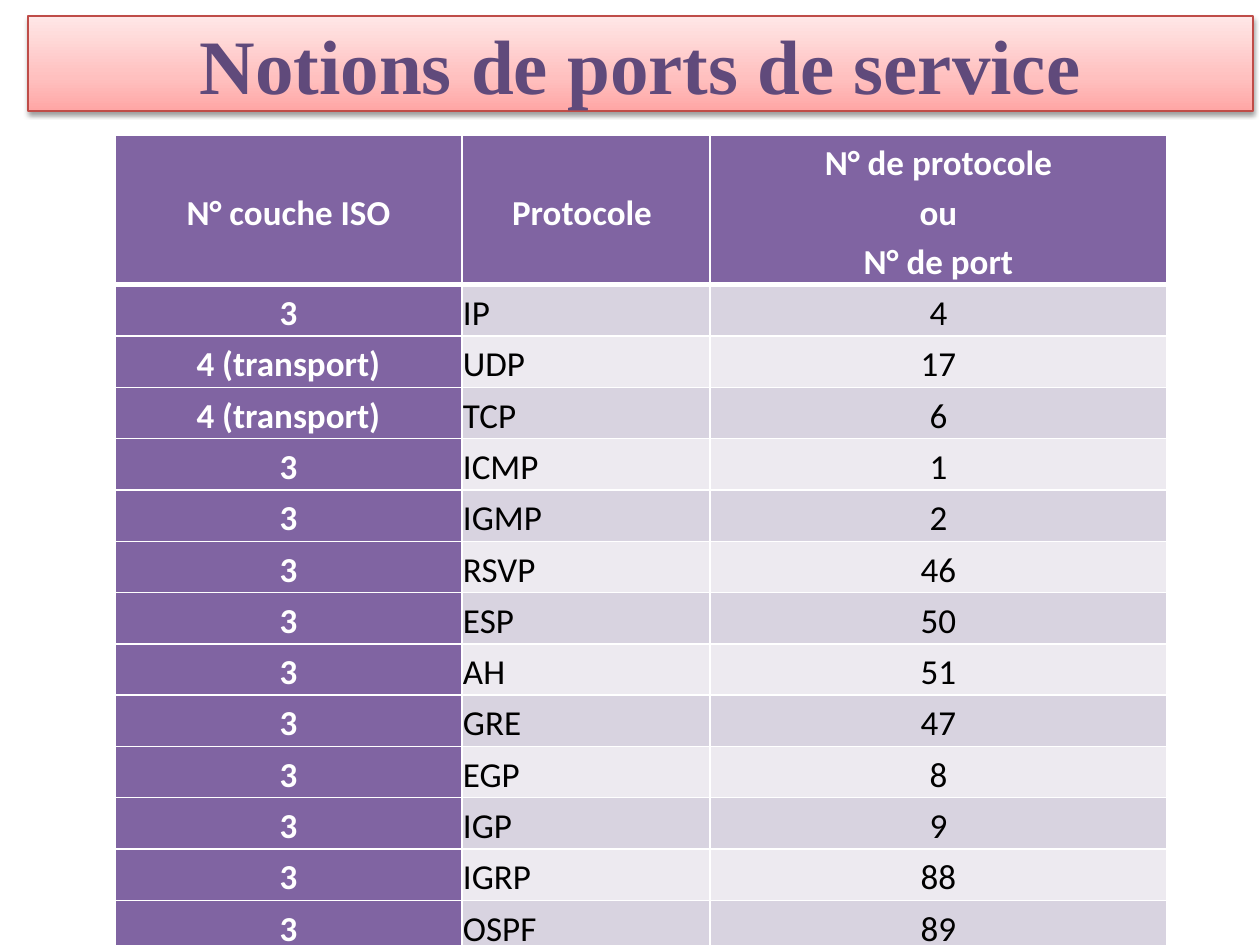
"""Build the slide that lists protocol and port numbers."""
from dataclasses import dataclass

from lxml.etree import SubElement
from pptx import Presentation
from pptx.dml.color import RGBColor
from pptx.enum.text import MSO_ANCHOR as Anchor, PP_ALIGN as Align
from pptx.oxml import parse_xml
from pptx.oxml.ns import nsdecls, qn
from pptx.util import Emu, Pt


@dataclass(frozen=True)
class Theme:
    title_font: str = "Times New Roman"
    table_font: str = "Calibri"
    title_size: int = 44
    table_size: int = 20
    title_color: str = "604A7B"
    banner_stops: tuple = ((0, "FFA6A5"), (35, "FFC0BF"), (100, "FFE7E7"))
    banner_line: str = "BF4C48"
    shadow: str = "000000"
    accent: str = "8064A2"
    bands: tuple = ("D8D3E0", "EDEAF0")
    light: str = "FFFFFF"
    dark: str = "000000"


THEME = Theme()
HEADERS = ("N° couche ISO", "Protocole ", "N° de protocole\nou\nN° de port")
PROTOCOLS = (
    ("3", "IP", "4"),
    ("4 (transport)", "UDP", "17"),
    ("4 (transport)", "TCP", "6"),
    ("3", "ICMP", "1"),
    ("3", "IGMP", "2"),
    ("3", "RSVP", "46"),
    ("3", "ESP", "50"),
    ("3", "AH", "51"),
    ("3", "GRE", "47"),
    ("3", "EGP", "8"),
    ("3", "IGP", "9"),
    ("3", "IGRP", "88"),
    ("3", "OSPF", "89"),
)
COLUMN_WIDTHS = (347, 248, 457)
HEADER_HEIGHT, ROW_HEIGHT = 148, 50


def px(length):
    return Emu(round(length * 914400 / 126))


def write_text(frame, text, *, font, size, color, bold=False, align=Align.CENTER, spacing=None):
    para = frame.paragraphs[0]
    para.text = text.replace("\n", "\v")
    para.alignment = align
    para.line_spacing = spacing
    for span in para.runs:
        span.font.name = font
        span.font.size = Pt(size)
        span.font.bold = bold
        span.font.color.rgb = RGBColor.from_string(color)


def add_banner(slide, text):
    box = slide.shapes.title
    box.left, box.top, box.width, box.height = px(28), px(16), px(1225), px(95)
    box.fill.gradient()
    box.fill.gradient_angle = 90
    stops = box.element.spPr.find(".//" + qn("a:gsLst"))
    stops.clear()
    for position, color in THEME.banner_stops:
        stop = SubElement(stops, qn("a:gs"), pos=str(position * 1000))
        SubElement(stop, qn("a:srgbClr"), val=color)
    box.line.color.rgb = RGBColor.from_string(THEME.banner_line)
    box.line.width = Pt(0.75)
    box.element.spPr.append(parse_xml(
        f'<a:effectLst {nsdecls("a")}><a:outerShdw blurRad="{Pt(3.1)}" dist="{Pt(1.6)}" '
        f'dir="5400000" rotWithShape="0"><a:srgbClr val="{THEME.shadow}">'
        '<a:alpha val="38000"/></a:srgbClr></a:outerShdw></a:effectLst>'))
    box.text_frame.vertical_anchor = Anchor.MIDDLE
    box.text_frame.word_wrap = True
    write_text(box.text_frame, text, font=THEME.title_font, size=THEME.title_size,
               color=THEME.title_color, bold=True)


def set_borders(cell, **widths):
    properties = cell._tc.get_or_add_tcPr()
    for index, (side, width) in enumerate(widths.items()):
        properties.insert(index, parse_xml(
            f'<a:ln{side} {nsdecls("a")} w="{Pt(width)}"><a:solidFill>'
            f'<a:srgbClr val="{THEME.light}"/></a:solidFill></a:ln{side}>'))


def fill_cell(cell, text, row, column):
    strong = row == 0 or column == 0
    background = THEME.accent if strong else THEME.bands[(row - 1) % 2]
    cell.fill.solid()
    cell.fill.fore_color.rgb = RGBColor.from_string(background)
    set_borders(cell, L=1, R=1, T=3 if row == 1 else 1, B=3 if row == 0 else 1)
    cell.margin_left = cell.margin_right = cell.margin_top = cell.margin_bottom = px(1)
    cell.vertical_anchor = Anchor.MIDDLE
    write_text(cell.text_frame, text, font=THEME.table_font, size=THEME.table_size,
               color=THEME.light if strong else THEME.dark, bold=strong, spacing=1.15,
               align=Align.LEFT if row and column == 1 else Align.CENTER)


def add_protocol_table(slide):
    records = (HEADERS, *PROTOCOLS)
    height = HEADER_HEIGHT + ROW_HEIGHT * len(PROTOCOLS)
    table = slide.shapes.add_table(len(records), len(HEADERS), px(115), px(135),
                                   px(sum(COLUMN_WIDTHS)), px(height)).table
    for column, width in zip(table.columns, COLUMN_WIDTHS):
        column.width = px(width)
    for row, record in enumerate(records):
        table.rows[row].height = px(ROW_HEIGHT if row else HEADER_HEIGHT)
        for column, text in enumerate(record):
            fill_cell(table.cell(row, column), text, row, column)


def main():
    deck = Presentation()
    deck.slide_width, deck.slide_height = px(1260), px(945)
    page = deck.slides.add_slide(deck.slide_layouts[5])
    add_banner(page, "Notions de ports de service")
    add_protocol_table(page)
    deck.save("out.pptx")


if __name__ == "__main__":
    main()
